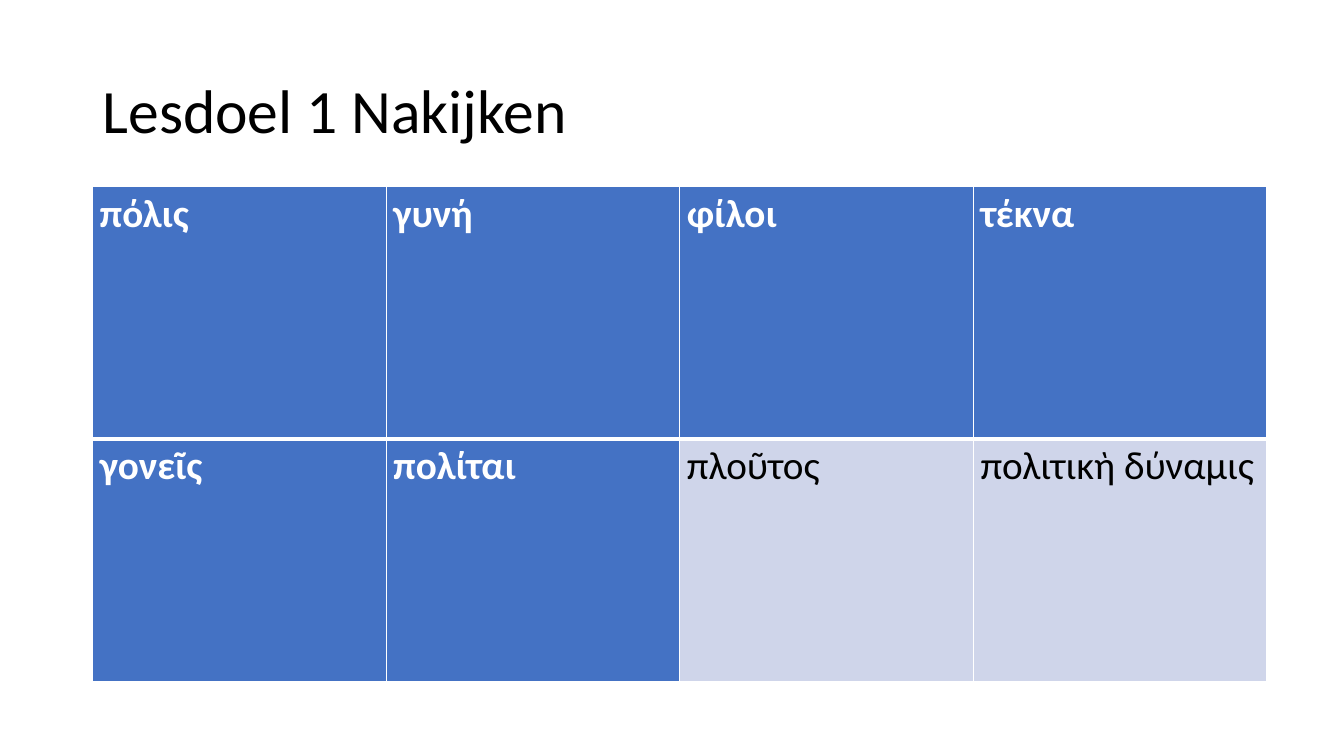
from lxml import etree
from pptx import Presentation
from pptx.dml.color import RGBColor
from pptx.enum.text import MSO_ANCHOR, PP_ALIGN
from pptx.oxml.ns import qn
from pptx.util import Cm, Pt

LEFT, MIDDLE = PP_ALIGN.LEFT, MSO_ANCHOR.MIDDLE
TITLE_ONLY = 5
FONT = "Calibri"
WHITE, BLACK, BLUE, PALE = "FFFFFF", "000000", "4472C4", "CFD5EA"
THIN, THICK = Pt(1), Pt(3)

WORDS = [
    ["πόλις", "γυνή", "φίλοι", "τέκνα"],
    ["γονεῖς", "πολίται", "πλοῦτος", "πολιτικὴ δύναμις"],
]
ROW_HEIGHTS = [Cm(6.36), Cm(6.11)]
PLAIN_CELLS = {(1, 2), (1, 3)}


def color(value):
    return RGBColor.from_string(value)


def format_para(para, size, value, bold, spacing):
    para.alignment = LEFT
    para.line_spacing = spacing
    para.font.name = FONT
    para.font.size = Pt(size)
    para.font.bold = bold
    para.font.color.rgb = color(value)


def add_title(page, text, left, top, width, height):
    title = page.shapes.title
    title.left, title.top, title.width, title.height = left, top, width, height
    frame = title.text_frame
    frame.text = text
    frame.word_wrap = True
    frame.vertical_anchor = MIDDLE
    format_para(frame.paragraphs[0], 44, BLACK, False, 0.9)


def set_borders(cell, top, bottom):
    """Draw white cell edges; the side edges are always thin."""
    properties = cell._tc.get_or_add_tcPr()
    for tag, width in (("lnL", THIN), ("lnR", THIN), ("lnT", top), ("lnB", bottom)):
        line = etree.SubElement(properties, qn(f"a:{tag}"), w=str(width))
        fill = etree.SubElement(line, qn("a:solidFill"))
        etree.SubElement(fill, qn("a:srgbClr"), val=WHITE)


def fill_cell(cell, word, plain):
    cell.fill.solid()
    cell.fill.fore_color.rgb = color(PALE if plain else BLUE)
    cell.margin_left = cell.margin_right = Cm(0.18)
    cell.margin_top = cell.margin_bottom = 0
    cell.text = word
    para = cell.text_frame.paragraphs[0]
    format_para(para, 28, BLACK if plain else WHITE, not plain, 1.07)
    para.space_after = Pt(8)


def add_word_table(page, left, top, width):
    columns = len(WORDS[0])
    table = page.shapes.add_table(
        len(WORDS), columns, left, top, width, sum(ROW_HEIGHTS)
    ).table
    for column in table.columns:
        column.width = width // columns
    for r, words in enumerate(WORDS):
        table.rows[r].height = ROW_HEIGHTS[r]
        for c, word in enumerate(words):
            cell = table.cell(r, c)
            set_borders(cell, THICK if r else THIN, THIN if r else THICK)
            fill_cell(cell, word, (r, c) in PLAIN_CELLS)


def main():
    deck = Presentation()
    deck.slide_width, deck.slide_height = Cm(33.87), Cm(19.05)
    page = deck.slides.add_slide(deck.slide_layouts[TITLE_ONLY])
    add_title(page, "Lesdoel 1 Nakijken", Cm(2.33), Cm(1.01), Cm(29.21), Cm(3.68))
    add_word_table(page, Cm(2.33), Cm(4.7), Cm(29.6))
    deck.save("out.pptx")


if __name__ == "__main__":
    main()
